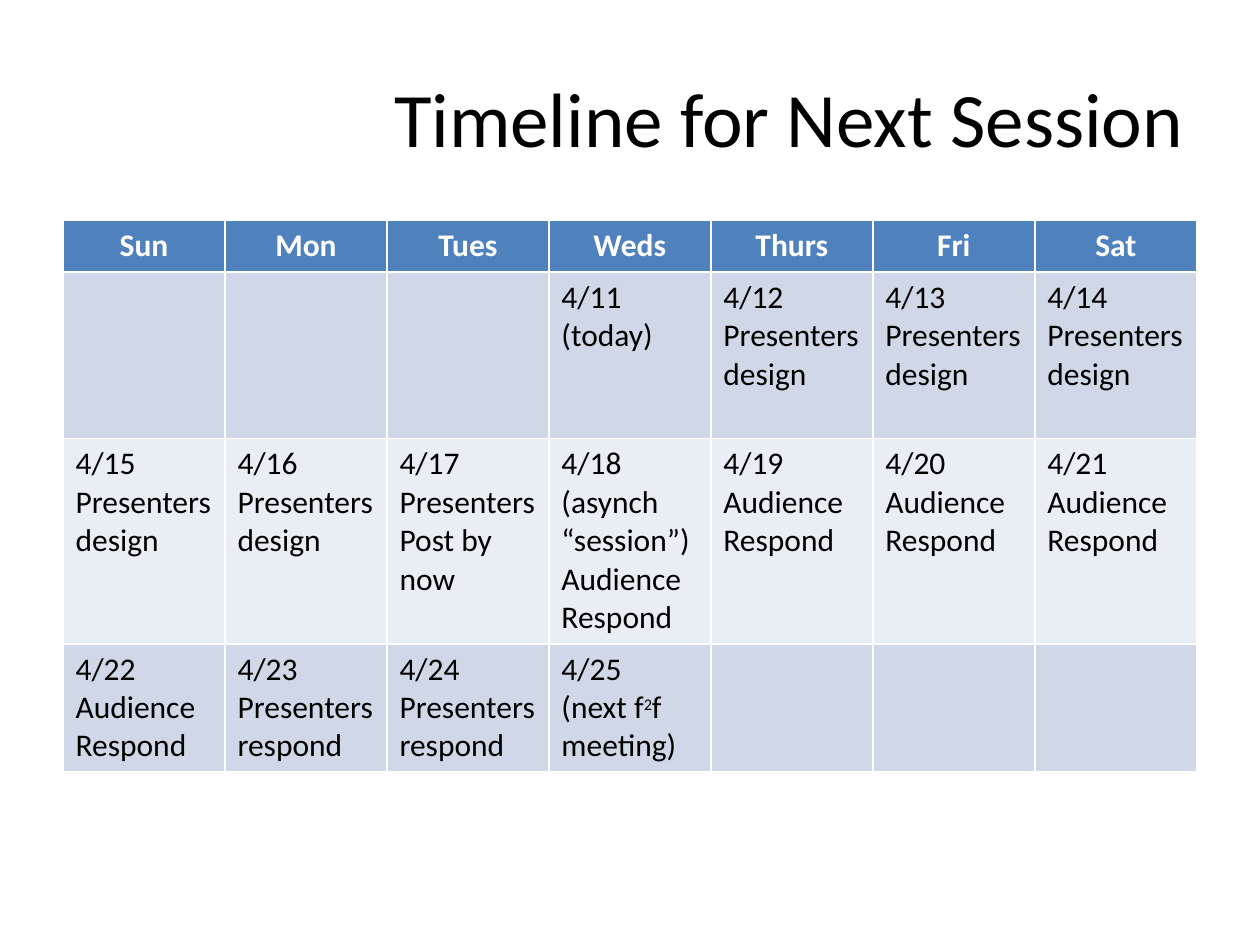
from pptx import Presentation
from pptx.dml.color import RGBColor
from pptx.enum import text
from pptx.util import Inches, Pt


def color(value):
    return RGBColor.from_string(value)


def add_text(paragraph, content, size=18, fill="000000", bold=False, align=text.PP_ALIGN.LEFT):
    paragraph.alignment = align
    run = paragraph.add_run()
    run.text = content
    run.font.name = "Calibri"
    run.font.size = Pt(size)
    run.font.bold = bold
    run.font.color.rgb = color(fill)
    return run


presentation = Presentation()
presentation.slide_width = Inches(10)
presentation.slide_height = Inches(7.5)
slide = presentation.slides.add_slide(presentation.slide_layouts[5])

title = slide.shapes.title
title.left, title.top, title.width, title.height = map(Inches, (0.5, 0.3, 9, 1.25))
title.text_frame.vertical_anchor = text.MSO_ANCHOR.MIDDLE
add_text(title.text_frame.paragraphs[0], "Timeline for Next Session", size=44, align=text.PP_ALIGN.RIGHT)

days = ["Sun", "Mon", "Tues", "Weds", "Thurs", "Fri", "Sat"]
design = ["Presenters design"]
audience = ["Audience", "Respond"]
presenters = ["Presenters respond"]
weeks = [
    [None, None, None, ["(today)"], design, design, design],
    [design, design, ["Presenters Post by now"], ["(asynch “session”)"] + audience, audience, audience, audience],
    [audience, presenters, presenters, ["(next f", "2", "f meeting)"], None, None, None],
]
week_fills = ["D0D8E8", "E9EDF4", "D0D8E8"]
row_heights = [0.41, 1.32, 1.63, 1.01]
first_sunday = 8

calendar = slide.shapes.add_table(
    len(row_heights), len(days), Inches(0.5), Inches(1.75), Inches(9), Inches(sum(row_heights))
).table
for row, height in zip(calendar.rows, row_heights):
    row.height = Inches(height)

for column, day in enumerate(days):
    cell = calendar.cell(0, column)
    cell.fill.solid()
    cell.fill.fore_color.rgb = color("4F81BD")
    add_text(cell.text_frame.paragraphs[0], day, fill="FFFFFF", bold=True, align=text.PP_ALIGN.CENTER)

for week, tasks in enumerate(weeks):
    for column, lines in enumerate(tasks):
        cell = calendar.cell(week + 1, column)
        cell.fill.solid()
        cell.fill.fore_color.rgb = color(week_fills[week])
        if lines is None:
            cell.text_frame.paragraphs[0].font.size = Pt(18)
            continue
        date = first_sunday + 7 * week + column
        add_text(cell.text_frame.paragraphs[0], f"4/{date}")
        if date == 25:
            before, exponent, after = lines
            paragraph = cell.text_frame.add_paragraph()
            add_text(paragraph, before)
            superscript = add_text(paragraph, exponent, size=16)
            superscript._r.get_or_add_rPr().set("baseline", "30000")
            add_text(paragraph, after)
        else:
            for line in lines:
                add_text(cell.text_frame.add_paragraph(), line)

presentation.save("out.pptx")
